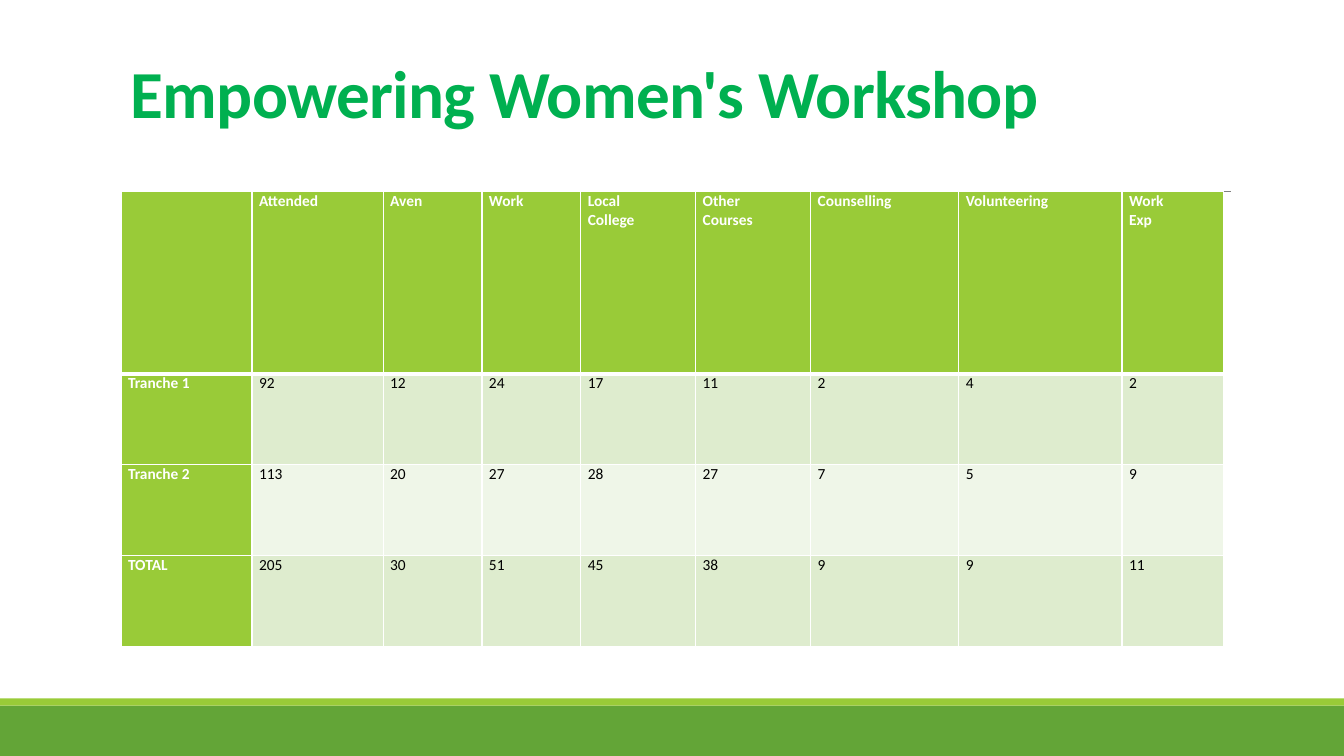
import pptx
import pptx.dml.color
import pptx.enum.shapes
import pptx.enum.text
import pptx.oxml.ns
import pptx.util
from lxml import etree

Inches = pptx.util.Inches
Pt = pptx.util.Pt

# Content
TITLE = "Empowering Women's Workshop"
ROWS = [
    ["", "Attended", "Aven", "Work", "Local\nCollege", "Other\nCourses",
     "Counselling", "Volunteering", "Work\nExp"],
    ["Tranche 1", "92", "12", "24", "17", "11", "2", "4", "2"],
    ["Tranche 2", "113", "20", "27", "28", "27", "7", "5", "9"],
    ["TOTAL", "205", "30", "51", "45", "38", "9", "9", "11"],
]
COLUMN_WIDTHS = [1.3, 1.3, 0.98, 0.98, 1.14, 1.14, 1.47, 1.62, 1.01]
ROW_HEIGHTS = [1.81, 0.9, 0.9, 0.9]
FONT = "Calibri"
COLORS = {
    "title": "00B050", "dark": "63A537", "header": "99CB38", "rule": "808080",
    "odd": "DEECCE", "even": "EFF6E8", "white": "FFFFFF", "black": "000000",
}
# Bands across the foot of the slide: top, height, colour
BANDS = [(7, 0.5, "dark"), (6.93, 0.07, "header")]


def color(name):
    return pptx.dml.color.RGBColor.from_string(COLORS[name])


def write_text(frame, text, size, fill, bold=False, line_spacing=None,
               tracking=None, margins=(0.1, 0.05, 0.1, 0.05)):
    frame.word_wrap = True
    (frame.margin_left, frame.margin_top,
     frame.margin_right, frame.margin_bottom) = map(Inches, margins)
    frame.text = text
    for paragraph in frame.paragraphs:
        if line_spacing:
            paragraph.line_spacing = line_spacing
        paragraph.font.size = Pt(size)
        for run in paragraph.runs:
            run.font.name = FONT
            run.font.size = Pt(size)
            run.font.bold = bold
            run.font.color.rgb = color(fill)
            if tracking:
                run.font._element.set("spc", str(int(tracking * 100)))


def add_border(cell, side, width):
    properties = cell._tc.get_or_add_tcPr()
    qn = pptx.oxml.ns.qn
    line = etree.SubElement(properties, qn("a:ln" + side), w=str(Pt(width)))
    fill = etree.SubElement(line, qn("a:solidFill"))
    etree.SubElement(fill, qn("a:srgbClr"), val=COLORS["white"])


presentation = pptx.Presentation()
presentation.slide_width = Inches(13.33)
presentation.slide_height = Inches(7.5)
slide = presentation.slides.add_slide(presentation.slide_layouts[6])

# Foot bands
for top, height, fill in BANDS:
    band = slide.shapes.add_shape(
        pptx.enum.shapes.MSO_SHAPE.RECTANGLE,
        0, Inches(top), presentation.slide_width, Inches(height))
    band.shadow.inherit = False
    band.fill.solid()
    band.fill.fore_color.rgb = color(fill)
    band.line.fill.background()

# Rule under the title
rule = slide.shapes.add_connector(
    pptx.enum.shapes.MSO_CONNECTOR.STRAIGHT,
    Inches(1.31), Inches(1.9), Inches(12.21), Inches(1.9))
rule.line.color.rgb = color("rule")
rule.line.width = Pt(0.5)
etree.SubElement(rule._element.spPr, pptx.oxml.ns.qn("a:effectLst"))

# Title
title = slide.shapes.add_textbox(
    Inches(1.2), Inches(0.31), Inches(11), Inches(1.59))
title.text_frame.vertical_anchor = pptx.enum.text.MSO_ANCHOR.BOTTOM
write_text(title.text_frame, TITLE, 48, "title", bold=True, line_spacing=0.85,
           tracking=-0.5, margins=(0.1, 0.05, 0.1, 0.59))

# Attendance table
table = slide.shapes.add_table(
    len(ROWS), len(COLUMN_WIDTHS), Inches(1.2), Inches(1.9),
    Inches(sum(COLUMN_WIDTHS)), Inches(sum(ROW_HEIGHTS))).table
for column, width in zip(table.columns, COLUMN_WIDTHS):
    column.width = Inches(width)
for row, height in zip(table.rows, ROW_HEIGHTS):
    row.height = Inches(height)

for row_index, values in enumerate(ROWS):
    for column_index, value in enumerate(values):
        cell = table.cell(row_index, column_index)
        heading = row_index == 0 or column_index == 0
        write_text(cell.text_frame, value, 11,
                   "white" if heading else "black", bold=heading)
        cell.margin_left = cell.margin_right = Inches(0.07)
        cell.margin_top = cell.margin_bottom = 0
        for side in "LRTB":
            thick = (row_index, side) in [(0, "B"), (1, "T")]
            add_border(cell, side, 3 if thick else 1)
        cell.fill.solid()
        stripe = "odd" if row_index % 2 else "even"
        cell.fill.fore_color.rgb = color("header" if heading else stripe)

presentation.save("out.pptx")
